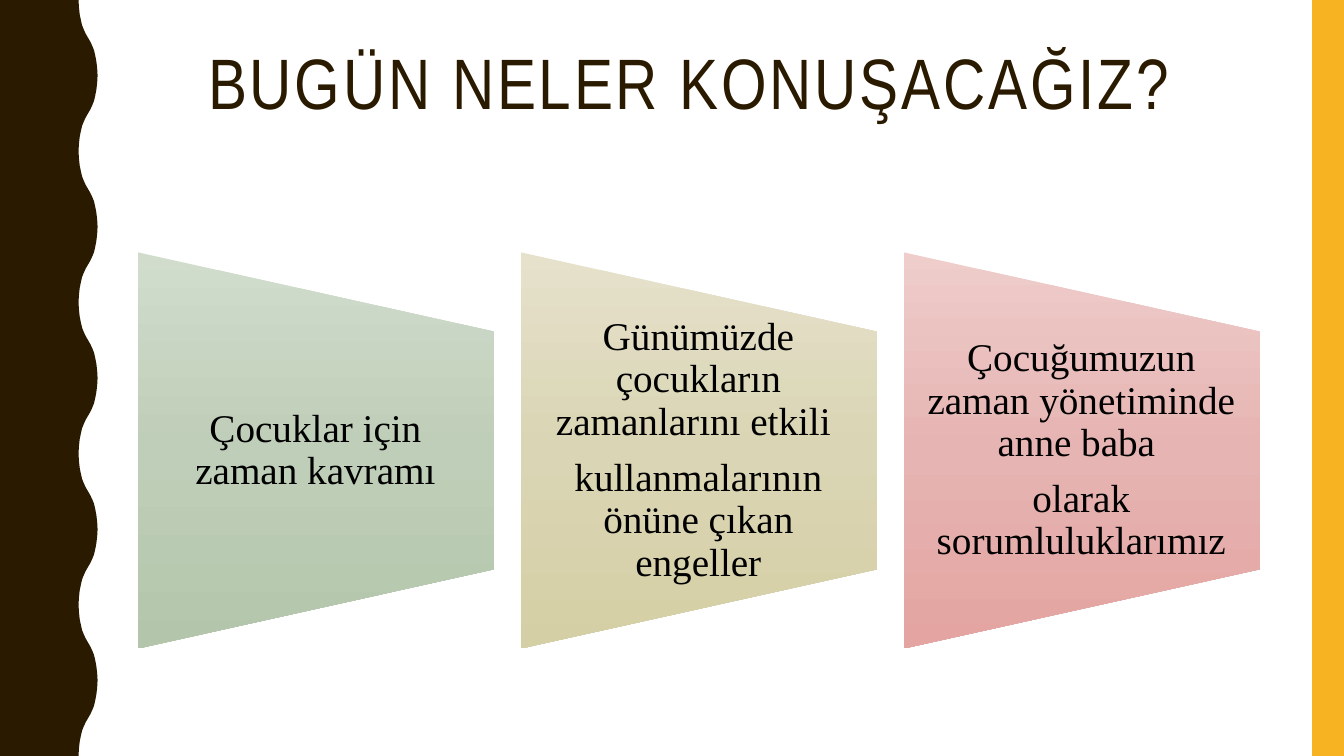
from copy import deepcopy
from dataclasses import dataclass

from pptx import Presentation
from pptx.dml.color import RGBColor
from pptx.enum.shapes import MSO_SHAPE as Shape
from pptx.enum.text import MSO_ANCHOR as Anchor, PP_ALIGN as Align
from pptx.util import Cm, Pt


@dataclass(frozen=True)
class Theme:
    brown: str = "2A1A00"
    amber: str = "F8B323"
    ink: str = "000000"
    green: tuple = ("D1DCCD", "BFCEB8", "B3C6AB")
    sand: tuple = ("E5E1CB", "DAD5B4", "D5CFA5")
    rose: tuple = ("EECDCB", "E6B4B2", "E4A4A1")
    title_font: str = "Arial Narrow"
    body_font: str = "Times New Roman"
    title_size: float = 51
    body_size: float = 28


class SlideBuilder:
    def __init__(self, slide, theme):
        self.shapes = slide.shapes
        self.theme = theme

    def _plain(self, shape, color):
        shape.shadow.inherit = False
        shape.line.fill.background()
        shape.fill.solid()
        shape.fill.fore_color.rgb = RGBColor.from_string(color)

    def bar(self, left, top, width, height, color):
        bar = self.shapes.add_shape(Shape.RECTANGLE, Cm(left), Cm(top), Cm(width), Cm(height))
        self._plain(bar, color)

    def outline(self, points, color):
        start, *rest = [(Cm(x), Cm(y)) for x, y in points]
        builder = self.shapes.build_freeform(*start)
        builder.add_line_segments(rest, close=True)
        self._plain(builder.convert_to_shape(), color)

    def trapezoid(self, left, top, width, height, colors):
        """Draw a trapezoid whose tall side is on the left, shaded from top to bottom."""
        shift = (width - height) / 2
        panel = self.shapes.add_shape(Shape.FLOWCHART_MANUAL_OPERATION, Cm(left + shift),
                                      Cm(top - shift), Cm(height), Cm(width))
        panel.rotation = 270
        self._plain(panel, colors[0])
        fill = panel.fill
        fill.gradient()
        fill.gradient_angle = 270
        panel.element.spPr.find("{*}gradFill").set("rotWithShape", "0")
        stop_list = panel.element.spPr.find(".//{*}gsLst")
        stop_list.insert(1, deepcopy(stop_list[0]))
        for index, (stop, color) in enumerate(zip(fill.gradient_stops, colors)):
            stop.position = index / (len(colors) - 1)
            stop.color.rgb = RGBColor.from_string(color)

    def text(self, box, paragraphs, font, size, color, anchor=Anchor.TOP,
             insets=(0.25, 0.13, 0.25, 0.13), after=0, tracking=0):
        frame = self.shapes.add_textbox(*map(Cm, box)).text_frame
        frame.word_wrap = True
        frame.vertical_anchor = anchor
        (frame.margin_left, frame.margin_top,
         frame.margin_right, frame.margin_bottom) = map(Cm, insets)
        for index, words in enumerate(paragraphs):
            paragraph = frame.add_paragraph() if index else frame.paragraphs[0]
            paragraph.alignment = Align.CENTER
            paragraph.line_spacing = 0.9
            paragraph.space_after = Pt(after)
            run = paragraph.add_run()
            run.text = words
            run.font.name = font
            run.font.size = Pt(size)
            run.font.color.rgb = RGBColor.from_string(color)
            if tracking:
                run.font._element.set("spc", str(tracking * 100))


SLIDE_W, SLIDE_H = 33.87, 19.05
WAVES, WAVE_LEFT, WAVE_DEPTH = 5, 1.98, 0.48
QUARTER_WAVE = [(0, 0), (0.01, 0.18), (0.03, 0.36), (0.06, 0.51),
                (0.09, 0.64), (0.13, 0.74), (0.18, 0.85)]
CARD_LEFT, CARD_TOP, CARD_W, CARD_H, CARD_PITCH = 3.48, 6.36, 8.97, 9.98, 9.65
TEXT_TOP, TEXT_H = 8.36, 5.99


def wavy_edge():
    """Build the brown band's outline from one quarter of a wave by symmetry."""
    period = SLIDE_H / WAVES
    rise = QUARTER_WAVE + [(WAVE_DEPTH - x, period / 2 - y) for x, y in reversed(QUARTER_WAVE)]
    wave = rise + [(x, period - y) for x, y in reversed(rise)]
    edge = [(WAVE_LEFT + x, n * period + y) for n in range(WAVES) for x, y in wave]
    return [(0, 0), *edge, (0, SLIDE_H)]


def main():
    deck = Presentation()
    deck.slide_width, deck.slide_height = Cm(SLIDE_W), Cm(SLIDE_H)
    theme = Theme()
    page = SlideBuilder(deck.slides.add_slide(deck.slide_layouts[6]), theme)

    page.outline(wavy_edge(), theme.brown)
    page.bar(33.07, 0, 0.8, SLIDE_H, theme.amber)
    page.text((3.48, 1.07, 28.27, 4.14), ["BUGÜN NELER KONUŞACAĞIZ? "],
              theme.title_font, theme.title_size, theme.brown, tracking=2)

    topics = [
        (theme.green, ["Çocuklar için zaman kavramı"]),
        (theme.sand, ["Günümüzde çocukların zamanlarını etkili ",
                      "kullanmalarının önüne çıkan engeller"]),
        (theme.rose, ["Çocuğumuzun zaman yönetiminde anne baba ",
                      "olarak sorumluluklarımız"]),
    ]
    for index, (colors, paragraphs) in enumerate(topics):
        left = CARD_LEFT + index * CARD_PITCH
        page.trapezoid(left, CARD_TOP, CARD_W, CARD_H, colors)
        page.text((left, TEXT_TOP, CARD_W, TEXT_H), paragraphs,
                  theme.body_font, theme.body_size, theme.ink, anchor=Anchor.MIDDLE,
                  insets=(0.48, 0, 0.51, 0), after=9.8)

    deck.save("out.pptx")


if __name__ == "__main__":
    main()
